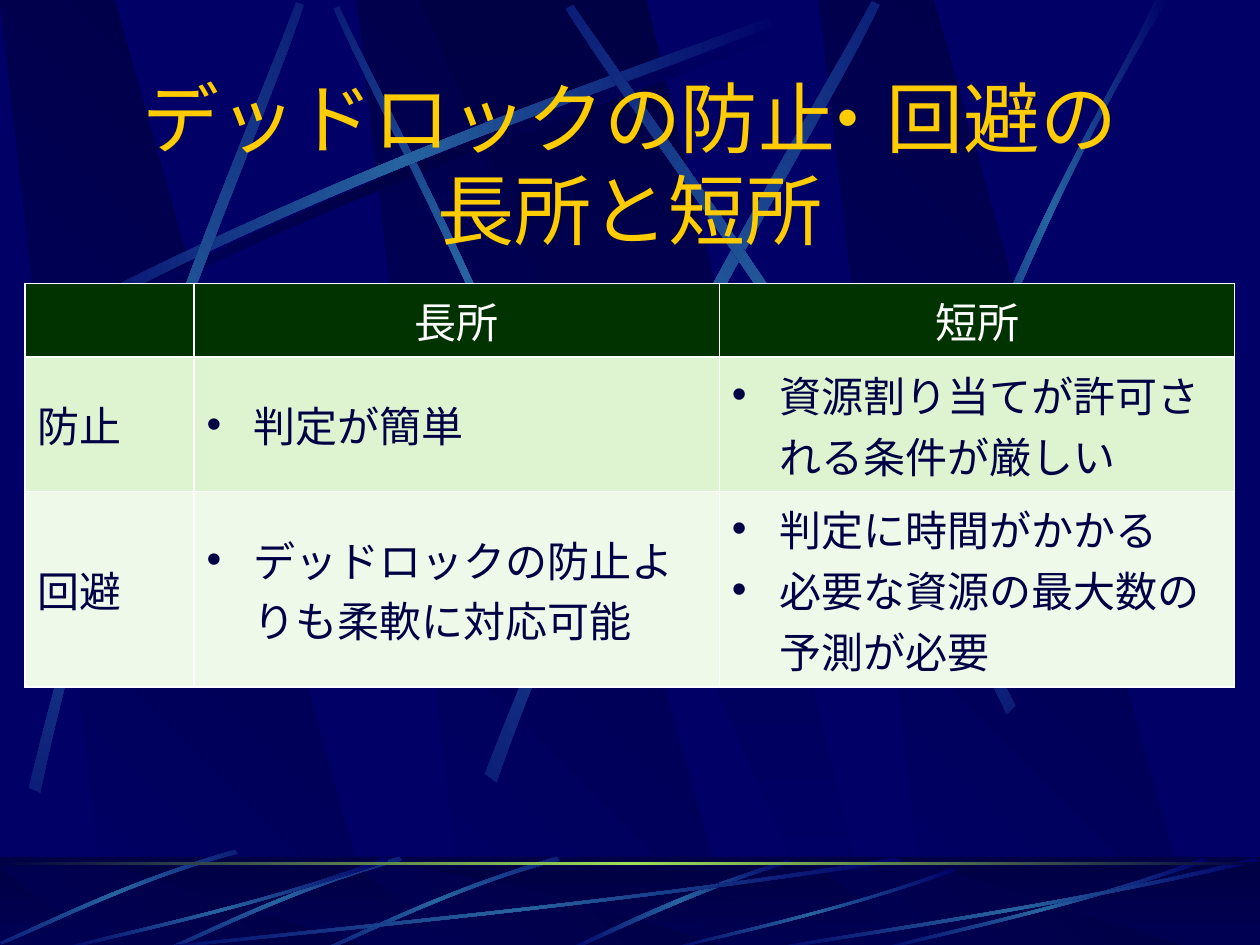
import math

import pptx
import pptx.dml.color
import pptx.enum.lang
import pptx.enum.shapes
import pptx.enum.text
import pptx.oxml
import pptx.oxml.ns
import pptx.util

Pt = pptx.util.Pt
qn = pptx.oxml.ns.qn
ALIGN = pptx.enum.text.PP_ALIGN
MID = pptx.enum.text.MSO_ANCHOR.MIDDLE
JAPAN = pptx.enum.lang.MSO_LANGUAGE_ID.JAPANESE

BASE, DARK, GLOW = "000066", "000044", "2663A0"
WHITE = "FFFFFF"
RISE = [BASE, DARK]
FALL = [DARK, BASE]
BEAM = [BASE, GLOW, BASE]

LONG = [(10.1, 192.2), (200.2, 90), (373, 36.7), (446.4, 7.2),
        (448.6, 11.5), (375.8, 43.9), (178.6, 103), (12.2, 199.4)]
RAYS = [
    (45, [(331.2, 313.9), (281.5, 168.5), (217.4, 55.4), (193.7, 3.6),
          (190.8, 5), (212.4, 56.9), (286.6, 185.8), (326.9, 316.1)]),
    (0, LONG),
    (311.7, [(16.6, 450), (67, 240.5), (141.8, 75.6), (169.2, 1.4),
             (173.5, 2.9), (149, 78.5), (61.9, 265), (23, 452.9)]),
    (321.6, [(277.2, 442.1), (358.6, 230.4), (459.4, 73.4), (498.2, 0.7),
             (502.6, 2.9), (467.3, 77.8), (349.9, 255.6), (283.7, 447.1)]),
    (34.7, [(580.3, 403.2), (482.4, 211), (371.5, 68.4), (327.6, 2.9),
            (323.3, 5), (365, 72.7), (493.2, 234), (575.3, 408.2)]),
    (0, [(531.4, 283.7), (586.1, 124.6), (639.4, 47.5), (660.2, 0),
         (667.4, 0), (601.9, 104.4), (553.7, 231.8), (535.7, 285.8)]),
]
ARC = [(451.4, 491), (386.6, 510.5), (343.4, 534.2), (322.6, 542.9),
       (326.2, 543.6), (352.8, 531.4), (411.1, 504), (452.2, 493.2)]
BLADE = [(318.2, 489.6), (255.6, 507.6), (206.6, 532.8), (184.3, 542.2),
         (185, 543.6), (207.4, 535), (262.8, 506.2), (319.7, 491.8)]
SWEEP = [(1, 0.04), (0.57, 0.57), (0.17, 0.85), (0.01, 1),
         (0, 0.99), (0.16, 0.81), (0.62, 0.51), (0.99, 0)]
SPANS = [(72, 490, 444, 54), (30, 490, 192, 54), (379.4, 496, 166.3, 47.5),
         (498, 490, 192, 54), (432, 490, 288, 54)]

TITLE = [[("デッドロックの防", 0), ("止・", -14.9), ("回避の", 0)], [("長所と短所", 0)]]
ROWS = [
    ["", "長所", "短所"],
    ["防止", "判定が簡単", "資源割り当てが許可される条件が厳しい"],
    ["回避", "デッドロックの防止よりも柔軟に対応可能",
     "判定に時間がかかる\n必要な資源の最大数の予測が必要"],
]
FILLS = ["003300", "DEF4D1", "EFF9EA"]
TALLS = [42.1, 76.8, 111.6]
WIDES = [96.5, 300.2, 294.5]


def tint(code):
    return pptx.dml.color.RGBColor.from_string(code)


def adorn(item, form):
    for key, value in form.items():
        setattr(item, key, value)


def node(text):
    space = pptx.oxml.ns.nsdecls("a")
    head, mark, tail = text.partition(" ")
    return pptx.oxml.parse_xml(f"{head} {space} {tail}")


def plain(shape):
    shape.shadow.inherit = False
    shape.line.fill.background()


def blend(shape, codes, angle):
    plain(shape)
    shape.fill.gradient()
    frame = shape._element.spPr
    step = 100000 // (len(codes) - 1)
    stops = "".join(f'<a:gs pos="{i * step}"><a:srgbClr val="{code}"/></a:gs>'
                    for i, code in enumerate(codes))
    frame.replace(frame.find(qn("a:gradFill")), node(
        f'<a:gradFill rotWithShape="1"><a:gsLst>{stops}</a:gsLst>'
        f'<a:lin ang="{angle * 60000}" scaled="0"/></a:gradFill>'))


def outline(slide, spots, codes, angle=0, turn=0):
    rad = math.radians(turn)
    spin = complex(math.cos(rad), math.sin(rad))
    spots = [complex(*spot) / spin for spot in spots]
    wide = [spot.real for spot in spots]
    tall = [spot.imag for spot in spots]
    mid = complex(min(wide) + max(wide), min(tall) + max(tall)) / 2
    spots = [spot + mid * spin - mid for spot in spots]
    ends = [(Pt(spot.real), Pt(spot.imag)) for spot in spots]
    pen = slide.shapes.build_freeform(*ends[0], scale=1.0)
    pen.add_line_segments(ends[1:], close=True)
    shape = pen.convert_to_shape()
    shape.rotation = turn
    blend(shape, codes, angle)
    return shape


def streak(slide, knots, codes=BEAM, turn=0):
    shape = outline(slide, knots, codes, turn=turn)
    lines = list(shape._element.iter(qn("a:lnTo")))
    for trio in (lines[:3], lines[4:7]):
        bend = node("<a:cubicBezTo />")
        trio[0].addprevious(bend)
        for line in trio:
            bend.append(line[0])
            line.getparent().remove(line)


def shift(knots, right, down):
    return [(x + right, y + down) for x, y in knots]


def bands(slide, top, height):
    foot = top + height
    slant = [(62, foot), (217.4, foot), (65.5, top), (0, top)]
    for left in (204, 0, 468):
        outline(slide, shift(slant, left, 0), RISE, 315)
    wedge = [(240, top), (474, foot), (500, foot), (369.4, top)]
    outline(slide, wedge, FALL, 90)


def bar(slide, top, height):
    kind = pptx.enum.shapes.MSO_SHAPE.RECTANGLE
    return slide.shapes.add_shape(kind, 0, Pt(top), Pt(720), Pt(height))


def floor(slide):
    blend(bar(slide, 489.6, 54), FALL, 90)
    bands(slide, 495.4, 48)
    veil = bar(slide, 489.6, 54)
    plain(veil)
    veil.fill.solid()
    veil.fill.fore_color.rgb = tint(DARK)
    veil._element.spPr.find(".//" + qn("a:srgbClr")).append(
        node('<a:alpha val="50000"/>'))
    streak(slide, ARC)
    for right, down in ((0, 0), (-90, 0), (-184, -4)):
        streak(slide, shift(BLADE, right, down), turn=315)
    for left, top, width, height in SPANS:
        streak(slide, [(left + x * width, top + y * height) for x, y in SWEEP])
    blend(bar(slide, 492.4, 1.7), [DARK, "9CE157", DARK], 0)


def write(para, text, code, form):
    run = para.add_run()
    run.text = text
    adorn(run.font, {"bold": False, "language_id": JAPAN, **form})
    run.font.color.rgb = tint(code)
    return run


def title(slide):
    box = slide.shapes.add_textbox(Pt(54), Pt(36), Pt(612), Pt(114))
    adorn(box.text_frame, {"word_wrap": True, "vertical_anchor": MID})
    para = box.text_frame.paragraphs[0]
    para.alignment = ALIGN.CENTER
    for i, line in enumerate(TITLE):
        if i:
            para.add_line_break()
        for text, space in line:
            run = write(para, text, "FFCC00", {"name": "Montserrat", "size": Pt(44)})
            prop = run.font._element
            prop.find(qn("a:latin")).addnext(node('<a:ea typeface="Montserrat"/>'))
            if space:
                prop.set("spc", str(round(space * 100)))


def edge(cell):
    for side in "LRTB":
        cell._tc.get_or_add_tcPr().append(node(
            f'<a:ln{side} w="{Pt(1)}"><a:solidFill>'
            f'<a:srgbClr val="{WHITE}"/></a:solidFill></a:ln{side}>'))


def fill(cell, text, row, col):
    edge(cell)
    cell.fill.solid()
    cell.fill.fore_color.rgb = tint(FILLS[row])
    if row:
        cell.vertical_anchor = MID
    for i, line in enumerate(text.split("\n")):
        frame = cell.text_frame
        para = frame.add_paragraph() if i else frame.paragraphs[0]
        para.alignment = ALIGN.LEFT if row else ALIGN.CENTER
        if row and col:
            prop = para._p.get_or_add_pPr()
            prop.set("marL", str(Pt(27)))
            prop.set("indent", str(-Pt(27)))
            prop.append(node('<a:buFont typeface="Arial"/>'))
            prop.append(node('<a:buChar char="•"/>'))
        if line:
            write(para, line, DARK if row else WHITE,
                  {"name": "Times New Roman", "size": Pt(24)})


def grid(slide):
    frame = slide.shapes.add_table(3, 3, Pt(14.4), Pt(162),
                                   Pt(sum(WIDES)), Pt(sum(TALLS)))
    for col, width in zip(frame.table.columns, WIDES):
        col.width = Pt(width)
    for r, texts in enumerate(ROWS):
        frame.table.rows[r].height = Pt(TALLS[r])
        for c, text in enumerate(texts):
            fill(frame.table.cell(r, c), text, r, c)


def main():
    deck = pptx.Presentation()
    adorn(deck, {"slide_width": Pt(720), "slide_height": Pt(540)})
    slide = deck.slides.add_slide(deck.slide_layouts[6])
    slide.background.fill.solid()
    slide.background.fill.fore_color.rgb = tint(BASE)
    bands(slide, 0, 541)
    streak(slide, shift(LONG, 4.3, 5.8), [BASE, DARK, BASE])
    for turn, knots in RAYS:
        streak(slide, knots, turn=turn)
    floor(slide)
    title(slide)
    grid(slide)
    deck.save("out.pptx")


if __name__ == "__main__":
    main()
